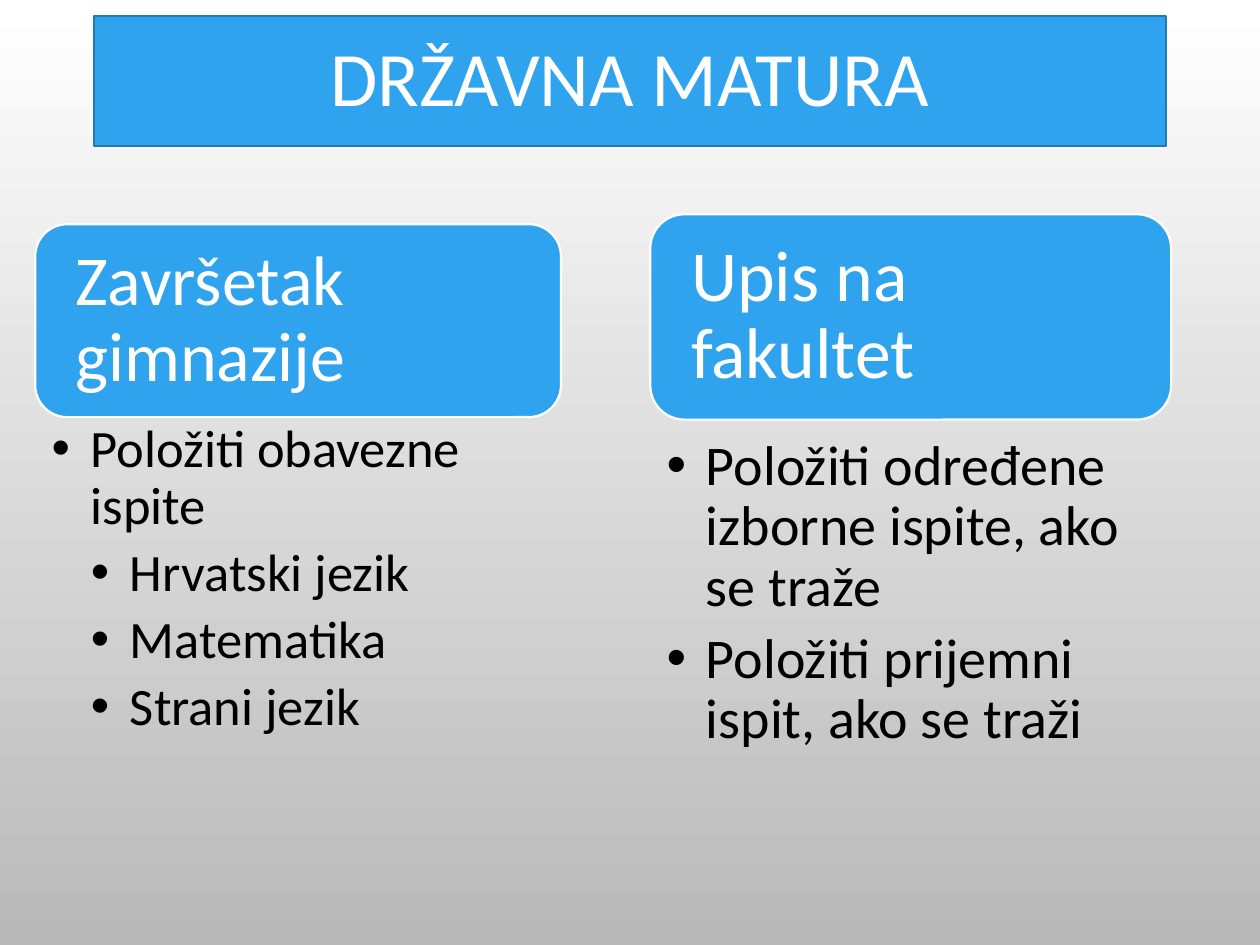
"""Build the "Državna matura" slide with two headed lists."""
from lxml import etree
from pptx import Presentation
from pptx import util as u
from pptx.dml.color import RGBColor
from pptx.enum import shapes, text
from pptx.oxml import ns

BLUE = RGBColor(0x2F, 0xA3, 0xEE)
DARK_BLUE = RGBColor(0x23, 0x79, 0xB0)
WHITE = RGBColor(0xFF, 0xFF, 0xFF)
BLACK = RGBColor(0, 0, 0)
GREY = RGBColor(0xB9, 0xB9, 0xB9)

INDENT = u.Cm(0.79)


class SlideBuilder:
    """Hold the style and the current slide."""

    font = "Calibri"

    def __init__(self, s):
        self.s = s

    def background(self, top, bottom):
        fill = self.s.background.fill
        fill.gradient()
        fill.gradient_angle = 270
        for stop, color in zip(fill.gradient_stops, (top, bottom)):
            stop.color.rgb = color

    def place(self, sp, left, top, width, height):
        sp.left, sp.top = u.Cm(left), u.Cm(top)
        sp.width, sp.height = u.Cm(width), u.Cm(height)

    def paint(self, sp, line):
        sp.fill.solid()
        sp.fill.fore_color.rgb = BLUE
        sp.line.color.rgb = line
        sp.line.width = u.Pt(1.25)

    def format(self, p, size, color, align):
        p.alignment = align
        p.line_spacing = 0.9
        p.space_before = u.Pt(0)
        for r in p.runs:
            r.font.name = self.font
            r.font.size = u.Pt(size)
            r.font.color.rgb = color

    def title(self, words, box, size):
        sp = self.s.shapes.title
        self.place(sp, *box)
        self.paint(sp, DARK_BLUE)
        tf = sp.text_frame
        tf.text = words
        tf.auto_size = text.MSO_AUTO_SIZE.NONE
        tf.vertical_anchor = text.MSO_ANCHOR.MIDDLE
        self.format(tf.paragraphs[0], size, WHITE, text.PP_ALIGN.CENTER)

    def header(self, words, box, size):
        sp = self.s.shapes.add_shape(
            shapes.MSO_SHAPE.ROUNDED_RECTANGLE, *(u.Cm(v) for v in box))
        sp.shadow.inherit = False
        self.paint(sp, WHITE)
        tf = sp.text_frame
        tf.word_wrap = True
        tf.margin_left = tf.margin_right = u.Cm(0.62)
        tf.vertical_anchor = text.MSO_ANCHOR.MIDDLE
        tf.text = words
        self.format(tf.paragraphs[0], size, WHITE, text.PP_ALIGN.LEFT)

    def bullets(self, idx, items, box, size, right, inset):
        sp = self.s.placeholders[idx]
        self.place(sp, *box)
        tf = sp.text_frame
        tf.text = "\n".join(words for _, words in items)
        tf.auto_size = text.MSO_AUTO_SIZE.NONE
        tf.margin_left, tf.margin_right = u.Cm(0.33), u.Cm(right)
        tf.margin_top = tf.margin_bottom = u.Cm(inset)
        for p, (level, _) in zip(tf.paragraphs, items):
            p.level = level
            pPr = p._p.get_or_add_pPr()
            pPr.set("marL", str(INDENT * (level + 1)))
            pPr.set("indent", str(-INDENT))
            etree.SubElement(pPr, ns.qn("a:buChar")).set("char", "•")
            self.format(p, size, BLACK, text.PP_ALIGN.LEFT)
            p.space_after = u.Pt(size * 0.2)


def main():
    prs = Presentation()
    prs.slide_width, prs.slide_height = u.Cm(25.4), u.Cm(19.05)
    b = SlideBuilder(prs.slides.add_slide(prs.slide_layouts[3]))
    b.background(WHITE, GREY)
    b.title("DRŽAVNA MATURA", (1.9, 0.33, 21.6, 2.62), 44)

    b.header("Završetak gimnazije", (0.71, 4.52, 10.6, 3.89), 40)
    b.bullets(1, [(0, "Položiti obavezne ispite"), (1, "Hrvatski jezik"),
                  (1, "Matematika"), (1, "Strani jezik")],
              (0.71, 8.41, 10.6, 7.52), 30, right=0.58, inset=0.1)

    b.header("Upis na fakultet", (13.11, 4.32, 10.5, 4.14), 41)
    b.bullets(2, [(0, "Položiti određene izborne ispite, ako se traže"),
                  (0, "Položiti prijemni ispit, ako se traži")],
              (13.11, 8.66, 10.5, 7.9), 32, right=0.81, inset=0.15)
    prs.save("out.pptx")


if __name__ == "__main__":
    main()
